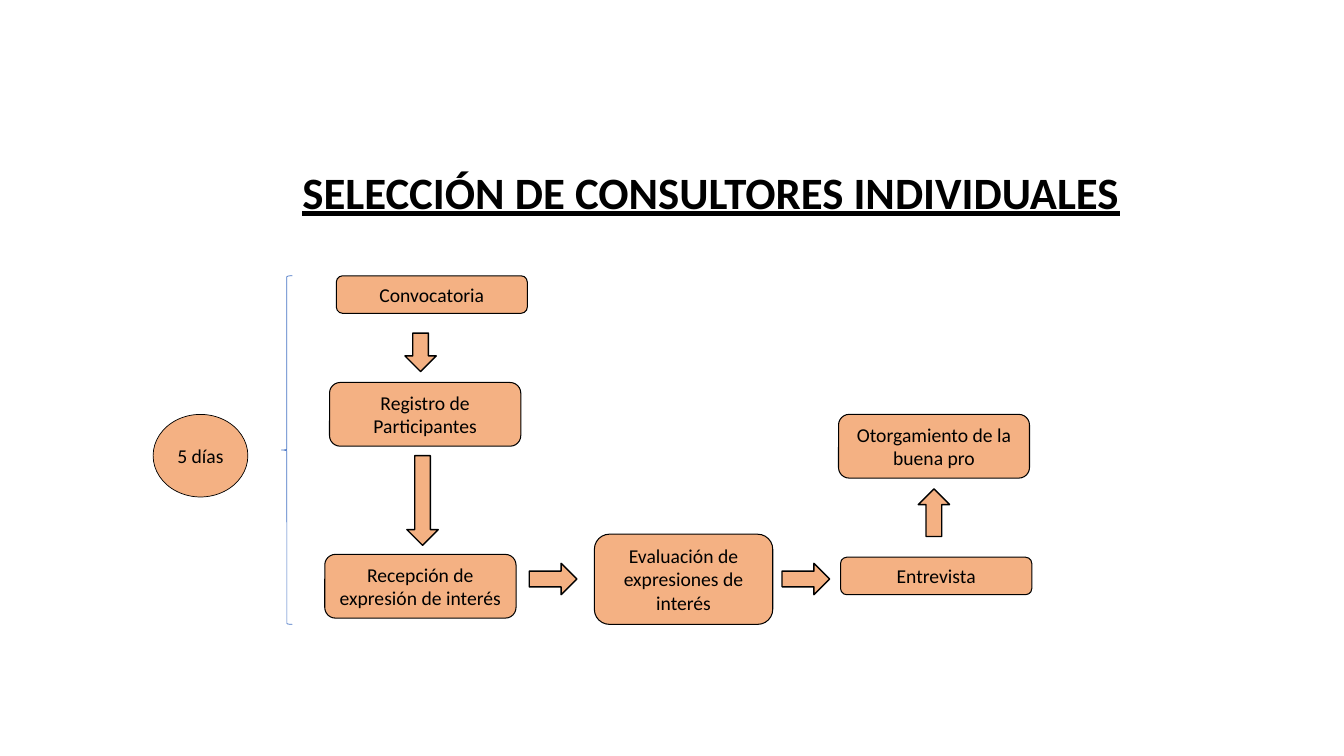
import pptx
import pptx.util
import pptx.dml.color
import pptx.enum.shapes
import pptx.enum.text

Pt = pptx.util.Pt
SHAPE = pptx.enum.shapes.MSO_SHAPE
ALIGN = pptx.enum.text.PP_ALIGN
ANCHOR = pptx.enum.text.MSO_ANCHOR
COLORS = {"fill": "F4B183", "ink": "000000", "brace": "4472C4"}
FONT = "Calibri"


class FlowSlide:
    """Draws the elements of a flow chart on one slide, in points."""

    def __init__(self, prs):
        self.s = prs.slides.add_slide(prs.slide_layouts[5])

    def color(self, name):
        return pptx.dml.color.RGBColor.from_string(COLORS[name])

    def style(self, p, size, bold=False, underline=False):
        for r in p.runs:
            r.font.name = FONT
            r.font.size = Pt(size)
            r.font.bold = bold
            r.font.underline = underline
            r.font.color.rgb = self.color("ink")

    def title(self, text, x, y, w, h):
        sp = self.s.shapes.title
        sp.left, sp.top, sp.width, sp.height = Pt(x), Pt(y), Pt(w), Pt(h)
        tf = sp.text_frame
        tf.text = text
        tf.word_wrap = True
        tf.vertical_anchor = ANCHOR.MIDDLE
        p = tf.paragraphs[0]
        p.alignment = ALIGN.LEFT
        p.line_spacing = 0.9
        self.style(p, 32, bold=True, underline=True)

    def shape(self, kind, x, y, w, h, line_width, line="ink"):
        sp = self.s.shapes.add_shape(kind, Pt(x), Pt(y), Pt(w), Pt(h))
        sp.shadow.inherit = False
        sp.fill.solid()
        sp.fill.fore_color.rgb = self.color("fill")
        sp.line.color.rgb = self.color(line)
        sp.line.width = Pt(line_width)
        return sp

    def label(self, kind, text, x, y, w, h, line_width, anchor):
        tf = self.shape(kind, x, y, w, h, line_width).text_frame
        tf.text = text
        tf.word_wrap = True
        tf.vertical_anchor = anchor
        p = tf.paragraphs[0]
        p.alignment = ALIGN.CENTER
        self.style(p, 14)

    def step(self, text, x, y, w, h):
        self.label(SHAPE.ROUNDED_RECTANGLE, text, x, y, w, h, 0.75, ANCHOR.TOP)

    def circle(self, text, x, y, w, h):
        self.label(SHAPE.OVAL, text, x, y, w, h, 0.5, ANCHOR.MIDDLE)

    def arrow(self, cx, cy, length, angle=0):
        h = 22.4
        sp = self.shape(SHAPE.RIGHT_ARROW, cx - length / 2, cy - h / 2, length, h, 1)
        sp.rotation = angle

    def brace(self, x, y, w, h):
        self.shape(SHAPE.LEFT_BRACE, x, y, w, h, 0.5, "brace").fill.background()


def main():
    prs = pptx.Presentation()
    prs.slide_width, prs.slide_height = Pt(960), Pt(540)
    flow = FlowSlide(prs)

    steps = [
        ("Recepción de expresión de interés", 232, 396, 136.6, 45.5),
        ("Registro de Participantes", 235.4, 273.2, 136.6, 45.5),
        ("Evaluación de expresiones de interés", 424.6, 381.6, 127.4, 64.4),
        ("Convocatoria", 240.3, 197, 136.4, 26.8),
        ("Otorgamiento de la buena pro", 599, 296, 136.4, 45.5),
        ("Entrevista", 600.4, 398, 136.6, 26.8),
    ]
    for step in steps:
        flow.step(*step)
    flow.circle("5 días", 109.4, 296, 67.7, 59)

    arrows = [
        (575.6, 413.6, 34),
        (395, 413.6, 34),
        (301.8, 357.5, 64, 90),
        (300.4, 251.7, 27.5, 90),
        (667.1, 366.2, 34, 270),
    ]
    for arrow in arrows:
        flow.arrow(*arrow)

    flow.title("SELECCIÓN DE CONSULTORES INDIVIDUALES", 208.8, 104.5, 602.6, 69)
    flow.brace(201, 197, 7.8, 249)
    prs.save("out.pptx")


if __name__ == "__main__":
    main()
